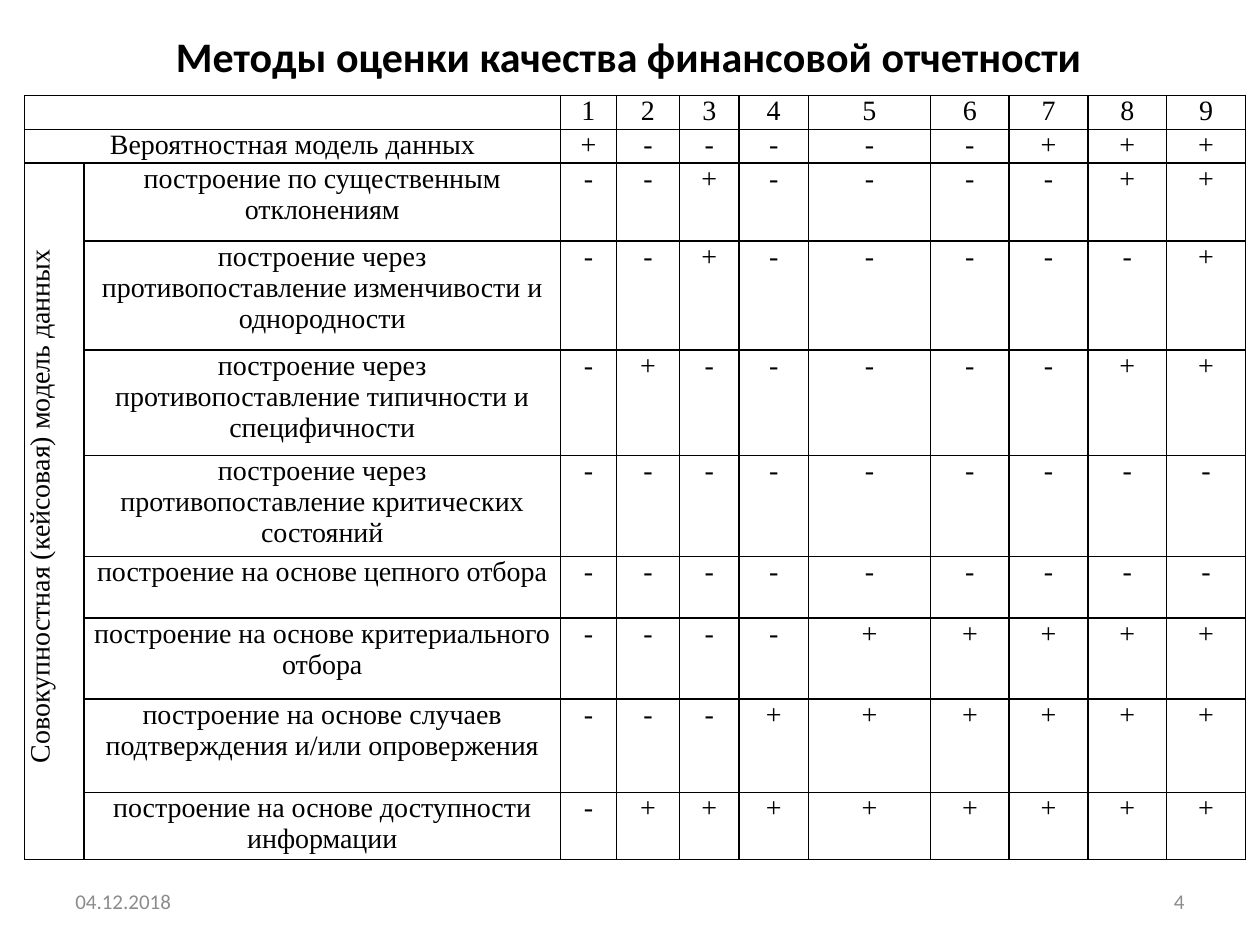
import lxml.etree
import pptx
import pptx.dml.color
import pptx.enum.text
import pptx.oxml.ns
import pptx.util

ALIGN = pptx.enum.text.PP_ALIGN
ANCHOR = pptx.enum.text.MSO_ANCHOR

COLUMN_WIDTHS = [4.72, 37.8, 4.45, 5, 4.73, 5.5, 9.7] + [6.25] * 4
HEADER_HEIGHT = 2.46
PROBABILITY_MODEL = ("Вероятностная модель данных", "+-----+++")
CASE_MODEL = "Совокупностная (кейсовая) модель данных"
CASE_METHODS = [
    ("построение по существенным отклонениям", "--+----++", 6.2),
    ("построение через противопоставление изменчивости и однородности", "--+-----+", 8.66),
    ("построение через противопоставление типичности и специфичности", "-+-----++", 8.36),
    ("построение через противопоставление критических состояний", "---------", 7.4),
    ("построение на основе цепного отбора", "---------", 4.92),
    ("построение на основе критериального отбора", "----+++++", 6.42),
    ("построение на основе случаев подтверждения и/или опровержения", "---++++++", 7.4),
    ("построение на основе доступности информации", "-++++++++", 4.92),
]


def color(value):
    """Turn a hex string into a colour."""
    return pptx.dml.color.RGBColor.from_string(value)


def add_typefaces(properties, font, tags):
    """Name one font for several scripts."""
    for tag in tags:
        lxml.etree.SubElement(properties, pptx.oxml.ns.qn(tag), typeface=font)


def write_text(frame, text, font="Calibri", size=12, fill="000000", bold=False, align=ALIGN.LEFT):
    """Write one formatted paragraph into a text frame."""
    paragraph = frame.paragraphs[0]
    paragraph.alignment = align
    if text:
        run = paragraph.add_run()
        run.text = text
        run.font.size = pptx.util.Pt(size)
        run.font.bold = bold
        run.font.color.rgb = color(fill)
        run.font.name = font
        add_typefaces(run._r.get_or_add_rPr(), font, ("a:ea", "a:cs"))
    end = lxml.etree.SubElement(paragraph._p, pptx.oxml.ns.qn("a:endParaRPr"), sz=str(size * 100))
    add_typefaces(end, font, ("a:latin", "a:ea", "a:cs"))


class SlideBuilder:
    """Holds the style and the current slide, measured on a 100 by 75 grid."""

    table_font = "Times New Roman"
    table_size = 16
    muted = "8C8C8C"
    border = "000000"

    def __init__(self, presentation):
        """Add a blank slide and set the grid step."""
        self.step = presentation.slide_width / 100
        self.slide = presentation.slides.add_slide(presentation.slide_layouts[6])

    def grid(self, *lengths):
        """Convert grid steps to slide lengths."""
        return [pptx.util.Emu(round(length * self.step)) for length in lengths]

    def text_box(self, text, place, **text_format):
        """Add a wrapped text box with middle anchoring."""
        frame = self.slide.shapes.add_textbox(*self.grid(*place)).text_frame
        frame.word_wrap = True
        frame.vertical_anchor = ANCHOR.MIDDLE
        write_text(frame, text, **text_format)

    def outline_cell(self, cell):
        """Draw a thin line on each side of a cell."""
        properties = cell._tc.get_or_add_tcPr()
        for position, side in enumerate(("a:lnL", "a:lnR", "a:lnT", "a:lnB")):
            line = lxml.etree.Element(pptx.oxml.ns.qn(side), w=str(pptx.util.Pt(1)))
            solid = lxml.etree.SubElement(line, pptx.oxml.ns.qn("a:solidFill"))
            lxml.etree.SubElement(solid, pptx.oxml.ns.qn("a:srgbClr"), val=self.border)
            properties.insert(position, line)

    def fill_cell(self, cell, text):
        """Style a cell and write its text."""
        cell.margin_left, cell.margin_right = self.grid(0.7, 0.7)
        cell.margin_top = cell.margin_bottom = 0
        cell.fill.background()
        self.outline_cell(cell)
        write_text(cell.text_frame, text, font=self.table_font, size=self.table_size, align=ALIGN.CENTER)

    def table(self, rows, left, top, widths, heights):
        """Add a bordered table and return it."""
        place = self.grid(left, top, sum(widths), sum(heights))
        table = self.slide.shapes.add_table(len(heights), len(widths), *place).table
        table.first_row = table.horz_banding = False
        for column, width in zip(table.columns, self.grid(*widths)):
            column.width = width
        for row, height, texts in zip(table.rows, self.grid(*heights), rows):
            row.height = height
            for cell, text in zip(row.cells, texts):
                self.fill_cell(cell, text)
        return table

    def methods_table(self):
        """Add the table that compares the methods."""
        label, marks = PROBABILITY_MODEL
        rows = [["", "", *"123456789"], [label, "", *marks]]
        rows += [["", method, *marks] for method, marks, _ in CASE_METHODS]
        rows[2][0] = CASE_MODEL
        heights = [HEADER_HEIGHT] * 2 + [height for _, _, height in CASE_METHODS]
        table = self.table(rows, 1.96, 7.6, COLUMN_WIDTHS, heights)
        for row in range(2):
            table.cell(row, 0).merge(table.cell(row, 1))
        side = table.cell(2, 0)
        side.merge(table.cell(len(rows) - 1, 0))
        side._tc.get_or_add_tcPr().set("vert", "vert270")
        indent, = self.grid(0.8)
        side.text_frame.paragraphs[0]._p.get_or_add_pPr().set("marL", str(indent))


def main():
    """Build and save the slide."""
    presentation = pptx.Presentation()
    presentation.slide_width = pptx.util.Inches(10)
    presentation.slide_height = pptx.util.Inches(7.5)
    builder = SlideBuilder(presentation)
    builder.text_box("Методы оценки качества финансовой отчетности", (4.9, 1.3, 90, 6.3),
                     size=24, bold=True, align=ALIGN.CENTER)
    builder.methods_table()
    builder.text_box("04.12.2018", (5, 69.5, 23.3, 4), fill=builder.muted)
    builder.text_box("4", (71.7, 69.5, 23.3, 4), fill=builder.muted, align=ALIGN.RIGHT)
    presentation.save("out.pptx")


if __name__ == "__main__":
    main()
